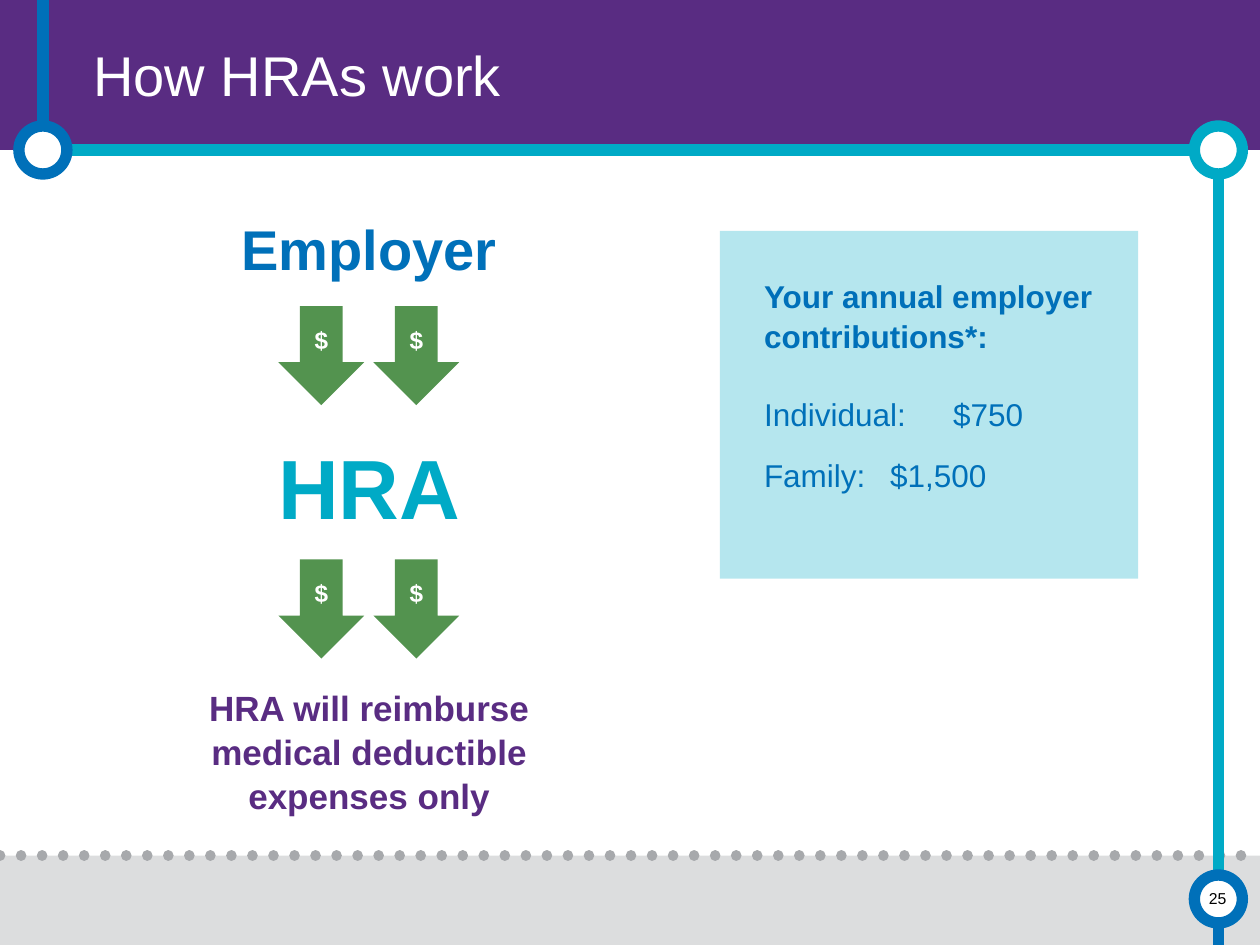
from dataclasses import dataclass

from lxml.etree import SubElement
from pptx import Presentation
from pptx.dml.color import RGBColor
from pptx.enum.dml import MSO_LINE
from pptx.enum.shapes import MSO_CONNECTOR, MSO_SHAPE
from pptx.enum.text import MSO_ANCHOR, PP_ALIGN
from pptx.oxml.ns import qn
from pptx.util import Pt


@dataclass(frozen=True)
class Theme:
    """Colours, type sizes and line widths of the slide."""
    font: str = "Arial"
    white: str = "FFFFFF"
    black: str = "000000"
    purple: str = "592C82"
    blue: str = "0070B9"
    teal: str = "00AAC6"
    green: str = "53934F"
    footer: str = "DCDDDE"
    dots: str = "A7A9AC"
    title: float = 32
    hra: float = 48
    note: float = 20
    dollar: float = 24
    body: float = 18
    number: float = 9
    rule: float = 6.5
    dot: float = 6
    spacing: float = 1.05


@dataclass(frozen=True)
class Rule:
    """A straight line between two points."""
    x1: float
    y1: float
    x2: float
    y2: float
    color: str


@dataclass(frozen=True)
class Label:
    """A bold centred caption of the flow."""
    text: str
    top: float
    height: float
    size: float
    color: str


@dataclass(frozen=True)
class Item:
    """A paragraph of the contributions panel."""
    text: str
    before: float
    bold: bool = False


T = Theme()
WIDTH, HEIGHT = 720, 540
HEADER, FOOTER = 85.7, 488.9
LEFT, RIGHT, NUMBER_Y = 24.5, 696.2, 513.7
RING = 27.4
FLOW_LEFT, FLOW_WIDTH = 72.7, 276.5
ARROW_W, ARROW_H, ARROW_GAP = 49, 56.6, 5.3

RULES = [
    Rule(RIGHT, NUMBER_Y, RIGHT, HEIGHT, T.blue),
    Rule(LEFT, 0, LEFT, HEADER, T.blue),
    Rule(RIGHT, HEADER, RIGHT, NUMBER_Y, T.teal),
    Rule(36, HEADER, 684, HEADER, T.teal),
]
RINGS = [(RIGHT, HEADER, T.teal), (LEFT, HEADER, T.blue), (RIGHT, NUMBER_Y, T.blue)]
LABELS = [
    Label("Employer", 117.4, 46, T.title, T.blue),
    Label("HRA", 242.6, 65.5, T.hra, T.teal),
    Label("HRA will reimburse medical deductible expenses only", 387.4, 80, T.note, T.purple),
]
ITEMS = [
    Item("Your annual employer contributions*:", 0, True),
    Item("Individual:\t$750", 21.7),
    Item("Family:\t$1,500", 12.7),
]


def rgb(color: str) -> RGBColor:
    """Turn a hex string into a colour."""
    return RGBColor.from_string(color)


def style(p, size: float, color: str, bold: bool = False) -> None:
    """Format the runs of a paragraph."""
    for r in p.runs:
        f = r.font
        f.name, f.size, f.bold = T.font, Pt(size), bold
        f.color.rgb = rgb(color)


def add_shape(s, kind, x: float, y: float, w: float, h: float, fill: str):
    """Add a flat shape without outline."""
    sp = s.shapes.add_shape(kind, Pt(x), Pt(y), Pt(w), Pt(h))
    sp.shadow.inherit = False
    sp.fill.solid()
    sp.fill.fore_color.rgb = rgb(fill)
    sp.line.fill.background()
    return sp


def add_rule(s, rule: Rule, width: float = T.rule):
    """Add a straight line without shadow."""
    c = s.shapes.add_connector(MSO_CONNECTOR.STRAIGHT, Pt(rule.x1), Pt(rule.y1), Pt(rule.x2), Pt(rule.y2))
    c.line.color.rgb = rgb(rule.color)
    c.line.width = Pt(width)
    SubElement(c.element.spPr, qn("a:effectLst"))
    return c


def add_ring(s, x: float, y: float, color: str) -> None:
    """Add a white circle with a thick outline, centred on a point."""
    sp = add_shape(s, MSO_SHAPE.OVAL, x - RING / 2, y - RING / 2, RING, RING, T.white)
    sp.line.color.rgb = rgb(color)
    sp.line.width = Pt(T.rule)


def add_text(s, text: str, x: float, y: float, w: float, h: float, size: float, color: str, bold: bool = False):
    """Add a centred text box and return its frame."""
    tf = s.shapes.add_textbox(Pt(x), Pt(y), Pt(w), Pt(h)).text_frame
    tf.word_wrap = True
    tf.text = text
    p = tf.paragraphs[0]
    p.alignment = PP_ALIGN.CENTER
    style(p, size, color, bold)
    return tf


def add_arrow(s, x: float, y: float) -> None:
    """Add a down arrow that carries a raised dollar sign."""
    tf = add_shape(s, MSO_SHAPE.DOWN_ARROW, x, y, ARROW_W, ARROW_H, T.green).text_frame
    tf.vertical_anchor = MSO_ANCHOR.MIDDLE
    tf.text = "$"
    p = tf.paragraphs[0]
    p.alignment = PP_ALIGN.CENTER
    style(p, T.dollar, T.white, True)
    p.runs[0].font._element.set("baseline", "30000")


def add_panel(s) -> None:
    """Add the translucent panel of employer contributions."""
    sp = add_shape(s, MSO_SHAPE.RECTANGLE, 411.4, 132, 239, 198.7, T.teal)
    color = sp.fill._xPr.find(qn("a:solidFill")).find(qn("a:srgbClr"))
    SubElement(color, qn("a:alpha"), val="29000")
    tf = sp.text_frame
    tf.word_wrap = True
    tf.vertical_anchor = MSO_ANCHOR.TOP
    tf.margin_left, tf.margin_top = Pt(25.2), Pt(25.3)
    tf.text = "\n".join(item.text for item in ITEMS)
    for p, item in zip(tf.paragraphs, ITEMS):
        p.alignment = PP_ALIGN.LEFT
        p.line_spacing = T.spacing
        p.space_before = Pt(item.before)
        style(p, T.body, T.blue, item.bold)


def add_frame(s) -> None:
    """Add the header, footer, rules and rings."""
    add_shape(s, MSO_SHAPE.RECTANGLE, 0, FOOTER, WIDTH, HEIGHT - FOOTER, T.footer)
    dots = add_rule(s, Rule(0, FOOTER, WIDTH, FOOTER, T.dots), T.dot)
    dots.line.dash_style = MSO_LINE.ROUND_DOT
    dots.element.spPr.find(qn("a:ln")).set("cap", "rnd")
    add_shape(s, MSO_SHAPE.RECTANGLE, 0, 0, WIDTH, HEADER, T.purple)
    for rule in RULES:
        add_rule(s, rule)
    for ring in RINGS:
        add_ring(s, *ring)


def add_title(s, text: str) -> None:
    """Fill the title placeholder and bring it to the front."""
    sp = s.shapes.title
    sp.left, sp.top, sp.width, sp.height = Pt(46.1), Pt(10.8), Pt(638), Pt(62.6)
    tf = sp.text_frame
    tf.text = text
    tf.vertical_anchor = MSO_ANCHOR.MIDDLE
    tf.paragraphs[0].alignment = PP_ALIGN.LEFT
    style(tf.paragraphs[0], T.title, T.white)
    sp.element.getparent().append(sp.element)


def main() -> None:
    """Build the slide and save it."""
    prs = Presentation()
    prs.slide_width, prs.slide_height = Pt(WIDTH), Pt(HEIGHT)
    s = prs.slides.add_slide(prs.slide_layouts[5])
    add_frame(s)
    add_title(s, "How HRAs work")
    number = add_text(s, "25", 680, 499, 31.7, 28.8, T.number, T.black)
    number.vertical_anchor = MSO_ANCHOR.MIDDLE
    for label in LABELS:
        tf = add_text(s, label.text, FLOW_LEFT, label.top, FLOW_WIDTH, label.height, label.size, label.color, True)
        tf.paragraphs[0].line_spacing = T.spacing
    for y in (174.9, 319.7):
        for col in range(2):
            add_arrow(s, 159.1 + col * (ARROW_W + ARROW_GAP), y)
    add_panel(s)
    prs.save("out.pptx")


if __name__ == "__main__":
    main()
